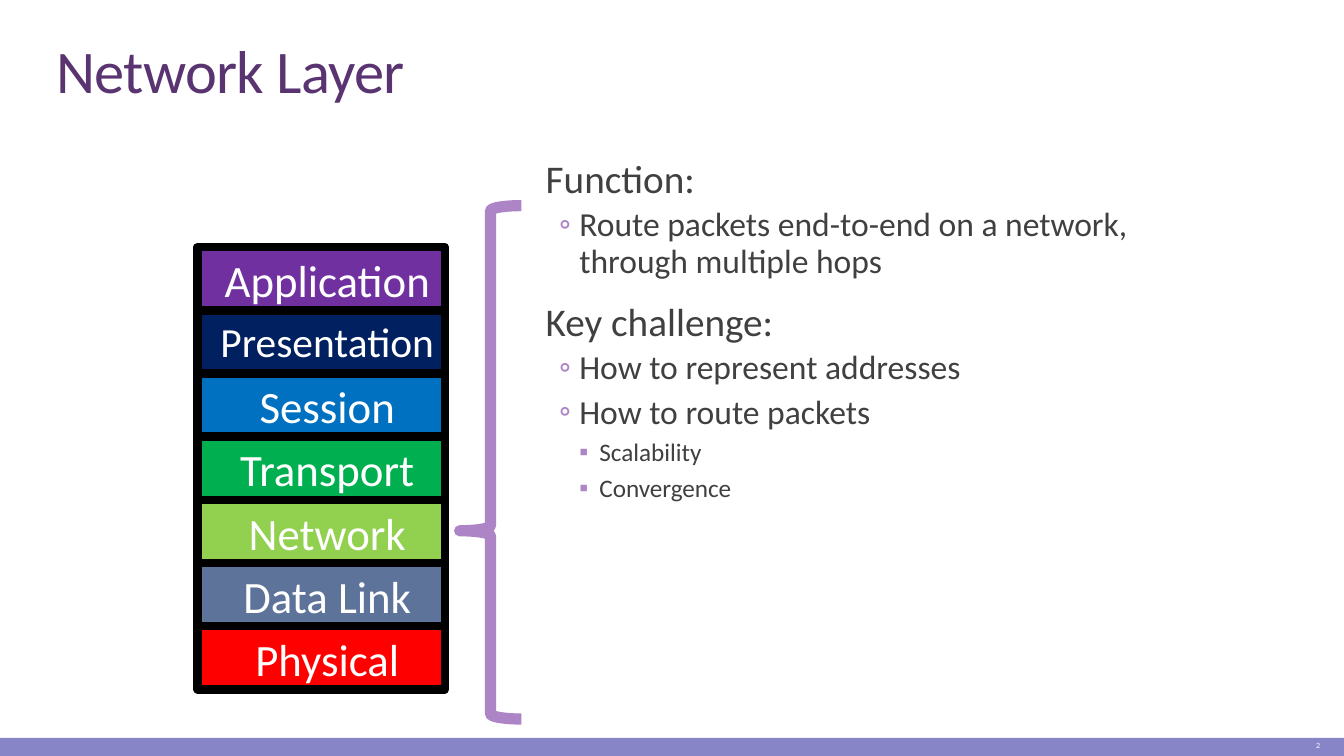
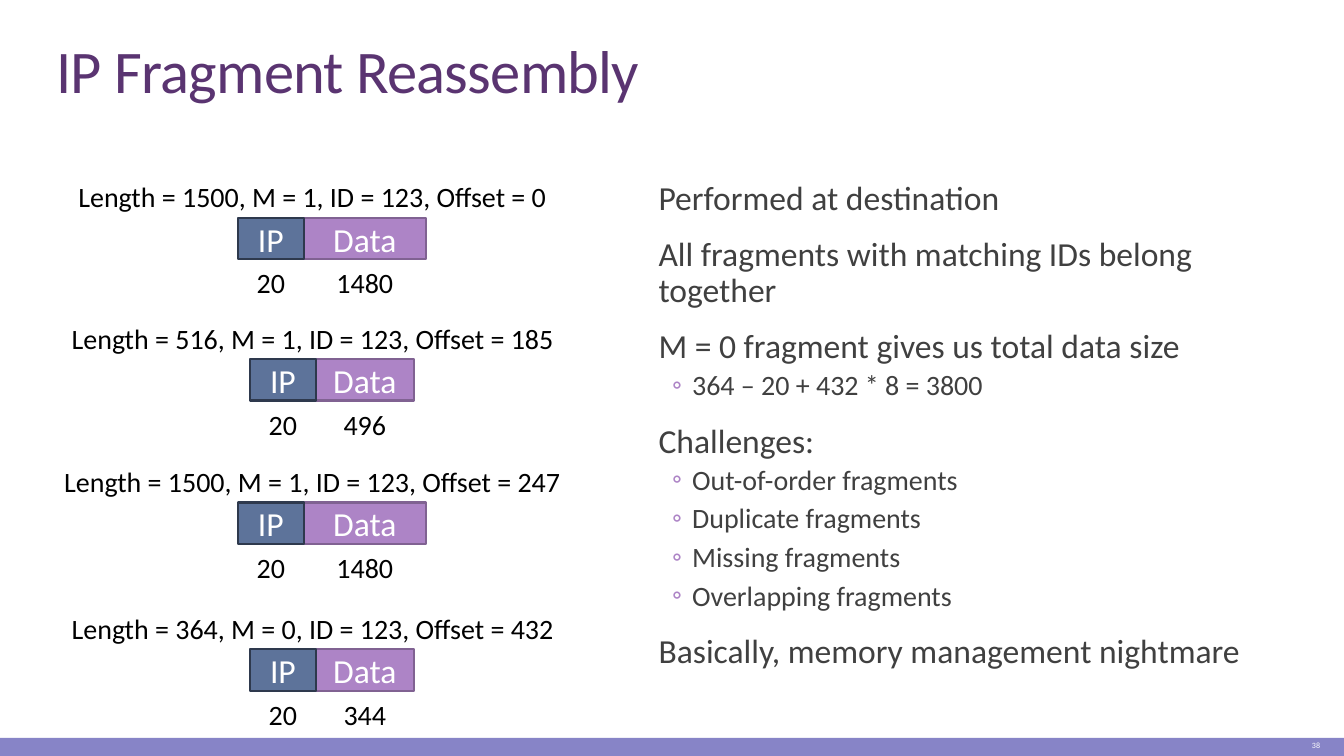
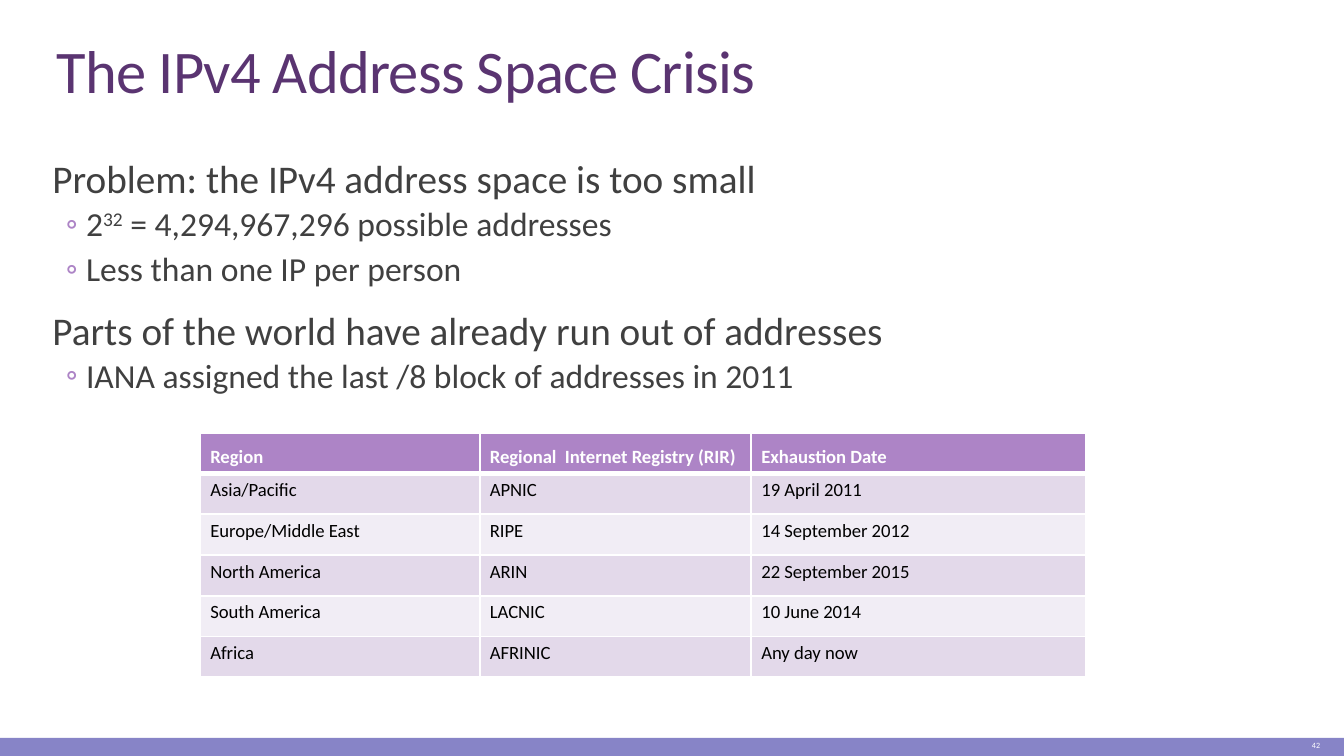
import lxml.etree
import pptx
import pptx.dml.color
import pptx.enum.shapes
import pptx.enum.text
import pptx.oxml.ns
import pptx.util

WIDTH = 10
HEIGHT = WIDTH * 9 / 16
FONT = "Calibri"
COLOURS = {
    "title": "5A3471", "body": "404040", "band": "8784C7", "accent": "AD84C6",
    "slate": "5D739A", "accent edge": "806292", "slate edge": "2E394D",
    "white": "FFFFFF", "black": "000000", "odd row": "E3D9EA", "even row": "F1EDF5",
}
ALIGN = pptx.enum.text.PP_ALIGN
ANCHOR = pptx.enum.text.MSO_ANCHOR
SHAPE = pptx.enum.shapes.MSO_SHAPE
CELL_INSETS = (0.075, 0.04, 0.075, 0.04)
BODY_INSETS = (0, 0.05, 0, 0.05)

LEVELS = [
    {"margin": 0.07, "hang": -0.07, "before": 9, "after": 1.5, "bullet": " "},
    {"margin": 0.32, "hang": -0.15, "before": 1.5, "after": 3, "bullet": "◦"},
    {"margin": 0.47, "hang": -0.15, "before": 1.5, "after": 3, "bullet": "▪"},
]

NETWORK_SIZES = (21, 18, 13.5)
NETWORK_POINTS = [
    (0, "Function:"),
    (1, "Route packets end-to-end on a network, through multiple hops"),
    (0, "Key challenge:"),
    (1, "How to represent addresses"),
    (1, "How to route packets"),
    (2, "Scalability"),
    (2, "Convergence"),
]
LAYERS = [
    ("Application", "7030A0", 24),
    ("Presentation", "002060", 22.2),
    ("Session", "0070C0", 24),
    ("Transport", "00B050", 24),
    ("Network", "92D050", 24),
    ("Data Link", "5D739A", 24),
    ("Physical", "FF0000", 24),
]

REASSEMBLY_SIZES = (18, 15)
REASSEMBLY_POINTS = [
    (0, "Performed at destination"),
    (0, "All fragments with matching IDs belong together"),
    (0, "M = 0 fragment gives us total data size"),
    (1, "364 – 20 + 432 * 8 = 3800"),
    (0, "Challenges:"),
    (1, "Out-of-order fragments"),
    (1, "Duplicate fragments"),
    (1, "Missing fragments"),
    (1, "Overlapping fragments"),
    (0, "Basically, memory management nightmare"),
]
FRAGMENTS = [
    (1.62, "Length = 1500, M = 1, ID = 123, Offset = 0", 3.73, "1480", 0.91),
    (2.67, "Length = 516, M = 1, ID = 123, Offset = 185", 3.83, "496", 0.73),
    (3.74, "Length = 1500, M = 1, ID = 123, Offset = 247", 3.94, "1480", 0.91),
    (4.83, "Length = 364, M = 0, ID = 123, Offset = 432", 3.83, "344", 0.73),
]

CRISIS_SIZES = (21, 18)
CRISIS_POINTS = [
    (0, "Problem: the IPv4 address space is too small"),
    (1, [("2", 0), ("32", 30), (" = 4,294,967,296 possible addresses", 0)]),
    (1, "Less than one IP per person"),
    (0, "Parts of the world have already run out of addresses"),
    (1, "IANA assigned the last /8 block of addresses in 2011"),
]
REGISTRY_COLUMNS = (2.08, 2.02, 2.49)
REGISTRIES = [
    ("Region", "Regional  Internet Registry (RIR)", "Exhaustion Date"),
    ("Asia/Pacific", "APNIC", "19 April 2011"),
    ("Europe/Middle East", "RIPE", "14 September 2012"),
    ("North America", "ARIN", "22 September 2015"),
    ("South America", "LACNIC", "10 June 2014"),
    ("Africa", "AFRINIC", "Any day now"),
]


def inch(*lengths):
    return [pptx.util.Inches(length) for length in lengths]


def colour(name):
    return pptx.dml.color.RGBColor.from_string(COLOURS.get(name, name))


def add_xml(parent, tag, **attributes):
    return lxml.etree.SubElement(parent, pptx.oxml.ns.qn(tag), attributes)


def add_span(para, text, size, ink, bold=False):
    span = para.add_run()
    span.text = text
    span.font.name = FONT
    span.font.size = pptx.util.Pt(size)
    span.font.bold = bold
    span.font.color.rgb = colour(ink)
    return span


def set_frame(frame, anchor=ANCHOR.TOP, insets=(0.1, 0.05, 0.1, 0.05), wrap=True):
    frame.word_wrap = wrap
    frame.vertical_anchor = anchor
    (frame.margin_left, frame.margin_top,
     frame.margin_right, frame.margin_bottom) = inch(*insets)
    return frame.paragraphs[0]


def add_label(shapes, place, text, size, ink="black", align=ALIGN.CENTER,
              anchor=ANCHOR.TOP, wrap=False):
    box = shapes.add_textbox(*inch(*place))
    para = set_frame(box.text_frame, anchor, wrap=wrap)
    para.alignment = align
    add_span(para, text, size, ink)


def add_block(shapes, place, fill=None, edge=None, weight=0, kind=SHAPE.RECTANGLE):
    block = shapes.add_shape(kind, *inch(*place))
    block.shadow.inherit = False
    if fill:
        block.fill.solid()
        block.fill.fore_color.rgb = colour(fill)
    else:
        block.fill.background()
    if edge:
        block.line.color.rgb = colour(edge)
        block.line.width = pptx.util.Pt(weight)
    else:
        block.line.fill.background()
    return block


def add_page(deck, title, number):
    page = deck.slides.add_slide(deck.slide_layouts[5])
    add_block(page.shapes, (0, 5.49, WIDTH, HEIGHT - 5.49), "band")
    heading = page.shapes.title
    heading.left, heading.top, heading.width, heading.height = inch(0.32, 0.24, 9.48, 0.6)
    para = set_frame(heading.text_frame, ANCHOR.BOTTOM)
    para.alignment = ALIGN.LEFT
    para.line_spacing = 0.85
    span = add_span(para, title, 32.4, "title")
    span._r.get_or_add_rPr().set("spc", "-40")
    add_label(page.shapes, (8.84, 5.46, 1.08, 0.17), number, 4.3, "white",
              ALIGN.RIGHT, ANCHOR.MIDDLE, True)
    return page


def add_points(page, place, points, sizes):
    frame = page.shapes.add_textbox(*inch(*place)).text_frame
    para = set_frame(frame, insets=BODY_INSETS)
    for index, (level, content) in enumerate(points):
        if index:
            para = frame.add_paragraph()
        style = LEVELS[level]
        para.level = level
        para.line_spacing = 0.9
        para.space_before = pptx.util.Pt(style["before"])
        para.space_after = pptx.util.Pt(style["after"])
        properties = para._p.get_or_add_pPr()
        properties.set("marL", str(pptx.util.Inches(style["margin"])))
        properties.set("indent", str(pptx.util.Inches(style["hang"])))
        tint = add_xml(properties, "a:buClr")
        add_xml(tint, "a:srgbClr", val=COLOURS["accent"])
        add_xml(properties, "a:buFont", typeface=FONT)
        add_xml(properties, "a:buChar", char=style["bullet"])
        spans = [(content, 0)] if isinstance(content, str) else content
        for text, raised in spans:
            span = add_span(para, text, sizes[level], "body")
            if raised:
                span._r.get_or_add_rPr().set("baseline", str(raised * 1000))


def add_layers(page):
    left, top, width, height = 1.47, 1.84, 1.84, 0.47
    for row, (name, fill, size) in enumerate(LAYERS):
        place = (left, top + row * height, width, height)
        block = add_block(page.shapes, place, fill, "black", 4.5)
        para = set_frame(block.text_frame, insets=CELL_INSETS)
        para.alignment = ALIGN.CENTER
        para.space_before = pptx.util.Pt(size * 0.2)
        para._p.get_or_add_pPr().set("marL", str(pptx.util.Inches(0.09)))
        add_span(para, name, size, "white")
    brace = add_block(page.shapes, (3.42, 1.53, 0.46, 3.82), edge="accent",
                      weight=6, kind=SHAPE.LEFT_BRACE)
    brace.adjustments[0] = 1 / 12
    brace.adjustments[1] = 19 / 30


def add_fragments(page):
    centre, header_width, height = 2.47, 0.49, 0.31
    label_centre, label_height = 2.35, 0.35
    for top, label, label_width, data_bytes, data_width in FRAGMENTS:
        left = centre - (header_width + data_width) / 2
        parts = [
            ("Data", data_bytes, left + header_width, data_width, "accent"),
            ("IP", "20", left, header_width, "slate"),
        ]
        packet = page.shapes.add_group_shape().shapes
        for name, count, start, width, fill in parts:
            block = add_block(packet, (start, top, width, height), fill, fill + " edge", 1.25)
            para = set_frame(block.text_frame, ANCHOR.MIDDLE, wrap=False)
            para.alignment = ALIGN.CENTER
            add_span(para, name, 18, "white")
            count_width = 0.2 + 0.11 * len(count)
            add_label(packet, (start + (width - count_width) / 2, top + height,
                               count_width, label_height), count, 15)
        add_label(page.shapes, (label_centre - label_width / 2, top - 0.33,
                                label_width, label_height), label, 15, align=ALIGN.LEFT)


def add_borders(cell, bottom):
    properties = cell._tc.get_or_add_tcPr()
    for tag, weight in (("a:lnL", 1), ("a:lnR", 1), ("a:lnT", 1), ("a:lnB", bottom)):
        line = add_xml(properties, tag, w=str(pptx.util.Pt(weight)))
        fill = add_xml(line, "a:solidFill")
        add_xml(fill, "a:srgbClr", val=COLOURS["white"])


def add_registries(page):
    place = (1.49, 3.22, sum(REGISTRY_COLUMNS), 1.82)
    table = page.shapes.add_table(len(REGISTRIES), len(REGISTRY_COLUMNS),
                                  *inch(*place)).table
    for column, width in zip(table.columns, REGISTRY_COLUMNS):
        column.width = pptx.util.Inches(width)
    for row, texts in enumerate(REGISTRIES):
        header = row == 0
        fill = "accent" if header else "odd row" if row % 2 else "even row"
        for column, text in enumerate(texts):
            cell = table.cell(row, column)
            add_borders(cell, 3 if header else 1)
            cell.fill.solid()
            cell.fill.fore_color.rgb = colour(fill)
            cell.vertical_anchor = ANCHOR.BOTTOM if header else ANCHOR.TOP
            (cell.margin_left, cell.margin_top,
             cell.margin_right, cell.margin_bottom) = inch(*CELL_INSETS)
            add_span(cell.text_frame.paragraphs[0], text, 10,
                     "white" if header else "black", header)


def main():
    deck = pptx.Presentation()
    deck.slide_width, deck.slide_height = inch(WIDTH, HEIGHT)

    page = add_page(deck, "Network Layer", "2")
    add_points(page, (3.99, 1.14, 4.61, 3.93), NETWORK_POINTS, NETWORK_SIZES)
    add_layers(page)

    page = add_page(deck, "IP Fragment Reassembly", "38")
    add_points(page, (4.83, 1.3, 4.78, 4.2), REASSEMBLY_POINTS, REASSEMBLY_SIZES)
    add_fragments(page)

    page = add_page(deck, "The IPv4 Address Space Crisis", "42")
    add_points(page, (0.32, 1.14, 9.48, 3.93), CRISIS_POINTS, CRISIS_SIZES)
    add_registries(page)

    deck.save("out.pptx")


if __name__ == "__main__":
    main()
